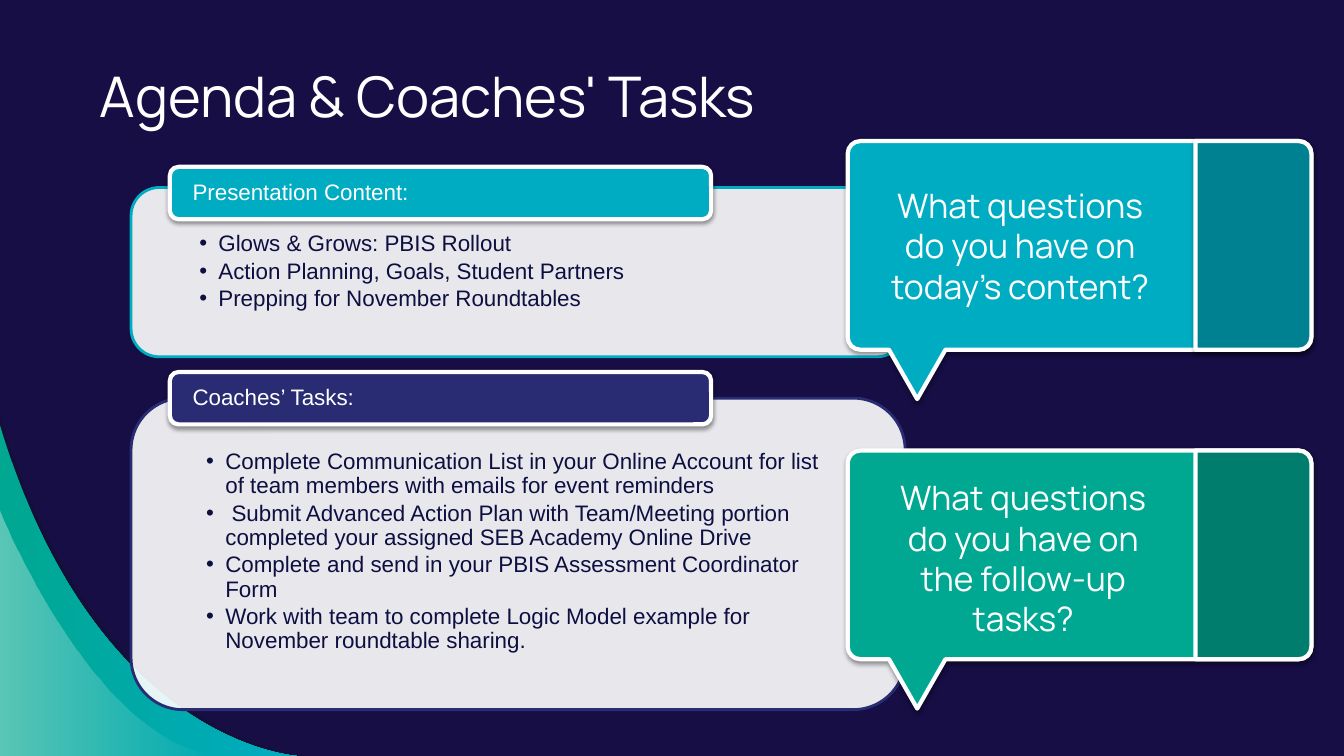
"""Build the agenda slide with two titled panels and two question callouts."""
from dataclasses import dataclass

from lxml import etree
from pptx import Presentation
from pptx import util as u
from pptx.dml.color import RGBColor
from pptx.enum import shapes, text
from pptx.oxml.ns import qn


@dataclass(frozen=True)
class Theme:
    """Colours, fonts and type sizes of the slide."""
    night: str = "160E44"
    shade: str = "12102F"
    ink: str = "0D0F41"
    white: str = "FFFFFF"
    cyan: str = "00ACC2"
    deep_cyan: str = "008192"
    green: str = "00A791"
    deep_green: str = "007D6D"
    indigo: str = "292C73"
    body_font: str = "Arial"
    display_font: str = "Manrope"
    title_size: int = 40
    question_size: int = 24
    body_size: int = 16


THEME = Theme()
CELL = u.Inches(0.1)
COLUMNS, ROWS = 133.33, 75


def cells(*counts):
    """Turn counts of grid cells into lengths."""
    return [u.Emu(round(count * CELL)) for count in counts]


def set_alpha(color_element, percent):
    """Make a colour element partly transparent."""
    alpha = etree.SubElement(color_element, qn("a:alpha"))
    alpha.set("val", str(percent * 1000))


def add_shadow(shape):
    """Give a shape the soft shadow that falls straight down."""
    effects = shape.element.spPr.find(qn("a:effectLst"))
    shadow = etree.SubElement(effects, qn("a:outerShdw"), {
        "blurRad": str(u.Pt(3.1)), "dist": str(u.Pt(1.6)),
        "dir": "5400000", "algn": "ctr", "rotWithShape": "0"})
    set_alpha(etree.SubElement(shadow, qn("a:srgbClr"), val="000000"), 38)


def paint(shape, fill, line=None, width=0, alpha=100, shadow=False):
    """Set the fill, outline and shadow of a shape."""
    shape.shadow.inherit = False
    shape.fill.solid()
    shape.fill.fore_color.rgb = RGBColor.from_string(fill)
    if alpha < 100:
        set_alpha(shape.element.spPr.find(f"{qn('a:solidFill')}/{qn('a:srgbClr')}"), alpha)
    if line:
        shape.line.color.rgb = RGBColor.from_string(line)
        shape.line.width = u.Pt(width)
    else:
        shape.line.fill.background()
    if shadow:
        add_shadow(shape)


def paint_gradient(shape, stops):
    """Fill a shape from left to right with (colour, alpha) stops."""
    shape.shadow.inherit = False
    shape.line.fill.background()
    shape.fill.gradient()
    shape.fill.gradient_angle = 0
    for stop, (color, _) in zip(shape.fill.gradient_stops, stops):
        stop.color.rgb = RGBColor.from_string(color)
    colors = shape.element.spPr.findall(f".//{qn('a:gs')}/{qn('a:srgbClr')}")
    for element, (_, alpha) in zip(colors, stops):
        if alpha < 100:
            set_alpha(element, alpha)


def corner(start, tip, end):
    """Return a line to a corner's start and the curve to its end."""
    controls = [tuple(near + 0.55 * (far - near) for near, far in zip(side, tip))
                for side in (start, end)]
    return [[start], [*controls, end]]


def add_outline(page, steps):
    """Add a closed freeform from steps of one point (line) or three (curve)."""
    places = [cells(*point) for step in steps for point in step]
    builder = page.shapes.build_freeform(*places[0])
    builder.add_line_segments(places[1:], close=True)
    shape = builder.convert_to_shape()
    lines = iter(shape.element.spPr.findall(f".//{qn('a:lnTo')}"))
    for step in steps[1:]:
        line = next(lines)
        if len(step) == 3:
            line.addprevious(bend := etree.Element(qn("a:cubicBezTo")))
            for part in (line, next(lines), next(lines)):
                bend.append(part[0])
                part.getparent().remove(part)
    return shape


def write(frame, lines, font, size, color, align=None, spacing=None, after=0):
    """Write lines into a text frame, one paragraph each."""
    frame.word_wrap = True
    frame.text = "\n".join(lines)
    for para in frame.paragraphs:
        para.alignment = align or text.PP_ALIGN.LEFT
        para.line_spacing = spacing
        para.space_after = u.Pt(after)
        for span in para.runs:
            span.font.name = font
            span.font.size = u.Pt(size)
            span.font.color.rgb = RGBColor.from_string(color)


def set_margins(frame, left, top, right, bottom):
    """Set the four insets of a text frame in grid cells."""
    (frame.margin_left, frame.margin_top,
     frame.margin_right, frame.margin_bottom) = cells(left, top, right, bottom)


def add_bullets(frame):
    """Put a hanging bullet before every paragraph."""
    indent = u.Inches(0.19)
    for para in frame.paragraphs:
        properties = para._p.get_or_add_pPr()
        properties.set("marL", str(indent))
        properties.set("indent", str(-indent))
        etree.SubElement(properties, qn("a:buFont"), typeface=THEME.body_font)
        etree.SubElement(properties, qn("a:buChar"), char="•")


def add_box(page, place, lines, size, align=None):
    """Add a text box in the display font, centred vertically."""
    frame = page.shapes.add_textbox(*cells(*place)).text_frame
    write(frame, lines, THEME.display_font, size, THEME.white, align)
    frame.vertical_anchor = text.MSO_ANCHOR.MIDDLE
    return frame


def add_panel(page, top, height, tab_top, color, heading, items):
    """Add a rounded panel of bullets with a heading tab on its top edge."""
    rounded = shapes.MSO_SHAPE.ROUNDED_RECTANGLE
    panel = page.shapes.add_shape(rounded, *cells(13, top, 76.8, height))
    paint(panel, THEME.white, color, 2, alpha=90)
    frame = panel.text_frame
    write(frame, items, THEME.body_font, THEME.body_size, THEME.ink, spacing=0.9, after=2.4)
    frame.vertical_anchor = text.MSO_ANCHOR.TOP
    set_margins(frame, 5.95, 3.65, 6, 1.2)
    add_bullets(frame)

    tab = page.shapes.add_shape(rounded, *cells(16.85, tab_top, 53.7, 5.2))
    paint(tab, color, THEME.white, 3, shadow=True)
    write(tab.text_frame, [heading], THEME.body_font, THEME.body_size, THEME.white, spacing=0.9)
    tab.text_frame.vertical_anchor = text.MSO_ANCHOR.MIDDLE
    set_margins(tab.text_frame, 2, 0, 2, 0)


def add_callout(page, top, color, side_color, question, text_left, text_top, side_shadow):
    """Add a speech callout with a darker right side and a question."""
    left, right, side, tail, radius = 84.1, 130.1, 118.6, 91, 1.25
    bottom = top + 20.7
    right_edge = (corner((right - radius, top), (right, top), (right, top + radius))
                  + corner((right, bottom - radius), (right, bottom), (right - radius, bottom)))
    left_edge = (corner((left + radius, bottom), (left, bottom), (left, bottom - radius))
                 + corner((left, top + radius), (left, top), (left + radius, top)))
    pointer = [[(tail + 2.8, bottom)], [(tail, bottom + 4.9)], [(tail - 2.8, bottom)]]
    paint(add_outline(page, right_edge + pointer + left_edge),
          color, THEME.white, 3, shadow=True)
    paint(add_outline(page, right_edge + [[(side, bottom)], [(side, top)]]),
          side_color, THEME.white, 3, shadow=side_shadow)
    add_box(page, (text_left, text_top, 30.4, 13.1), [question],
            THEME.question_size, text.PP_ALIGN.CENTER)


def add_swoosh(page):
    """Add the layered wave in the lower left corner."""
    def wave(top, *bend):
        return add_outline(page, [[(0, top)], bend, [(0, ROWS)]])

    paint(wave(41.3, (9.8, 73.9), (30.3, ROWS), (30.3, ROWS)), THEME.shade, alpha=54)
    paint_gradient(wave(42.2, (9.5, 73.9), (29.5, ROWS), (29.5, ROWS)),
                   [(THEME.green, 100), (THEME.cyan, 100)])
    paint_gradient(wave(50.6, (0, 50.6), (9.1, 73.5), (21.6, ROWS)),
                   [(THEME.white, 36), (THEME.white, 0)])


def main():
    """Build the slide and save it."""
    deck = Presentation()
    deck.slide_width, deck.slide_height = cells(COLUMNS, ROWS)
    page = deck.slides.add_slide(deck.slide_layouts[6])
    page.background.fill.solid()
    page.background.fill.fore_color.rgb = RGBColor.from_string(THEME.night)
    add_swoosh(page)
    add_panel(page, 18.6, 16.8, 16.55, THEME.cyan, "Presentation Content:", [
        "Glows & Grows: PBIS Rollout",
        "Action Planning, Goals, Student Partners",
        "Prepping for November Roundtables"])
    add_panel(page, 39.5, 30.9, 36.9, THEME.indigo, "Coaches’ Tasks:", [
        "Complete Communication List in your Online Account for list of team members "
        "with emails for event reminders",
        " Submit Advanced Action Plan with Team/Meeting portion completed your assigned "
        "SEB Academy Online Drive",
        "Complete and send in your PBIS Assessment Coordinator Form",
        "Work with team to complete Logic Model example for November roundtable sharing."])
    title = add_box(page, (8.9, 4.8, 102.6, 9.2), ["Agenda & Coaches' Tasks"], THEME.title_size)
    set_margins(title, 1, 1, 1, 1)
    add_callout(page, 14, THEME.cyan, THEME.deep_cyan,
                "What questions do you have on today’s content?", 86, 17.8, True)
    add_callout(page, 44.7, THEME.green, THEME.deep_green,
                "What questions do you have on the follow-up tasks?", 86.3, 48.8, False)
    deck.save("out.pptx")


if __name__ == "__main__":
    main()
